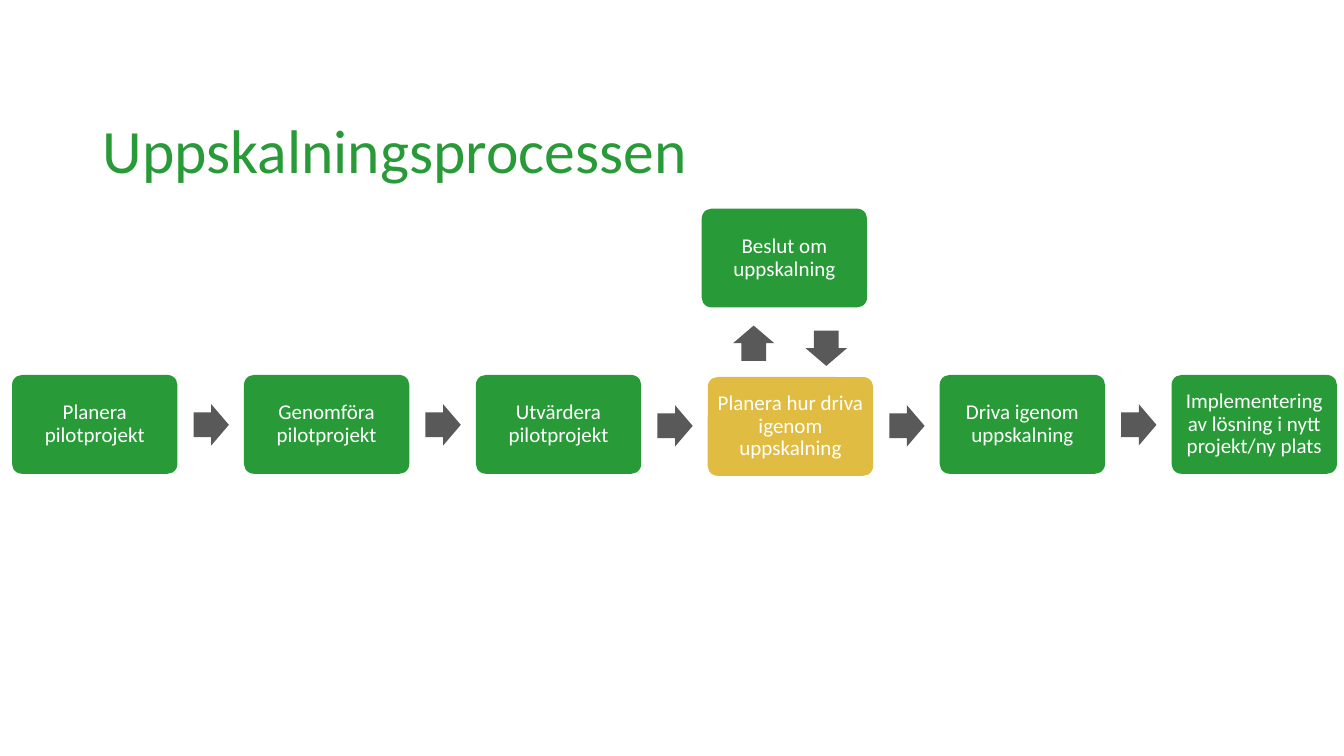
from pptx import Presentation
from pptx.dml.color import RGBColor
from pptx.enum.shapes import MSO_SHAPE
from pptx.enum.text import MSO_ANCHOR, PP_ALIGN
from pptx.util import Inches, Pt

ROUND, ARROW = MSO_SHAPE.ROUNDED_RECTANGLE, MSO_SHAPE.RIGHT_ARROW
LEFT, CENTER = PP_ALIGN.LEFT, PP_ALIGN.CENTER
MIDDLE, BOTTOM = MSO_ANCHOR.MIDDLE, MSO_ANCHOR.BOTTOM

GREEN, GOLD, GRAY, WHITE = "289B38", "E1BC42", "595959", "FFFFFF"


def color(code):
    return RGBColor.from_string(code)


def write(frame, text, size=15, ink=WHITE, align=CENTER, anchor=MIDDLE,
          pad=(0.06, 0.06), font="Calibri"):
    frame.word_wrap = True
    frame.vertical_anchor = anchor
    frame.margin_left = frame.margin_right = Inches(pad[0])
    frame.margin_top = frame.margin_bottom = Inches(pad[1])
    frame.text = text
    para = frame.paragraphs[0]
    para.alignment = align
    para.line_spacing = 0.9
    para.font.name = font
    para.font.size = Pt(size)
    para.font.color.rgb = color(ink)


class Board:
    box_size = (1.64, 0.98)
    arrow_size = (0.35, 0.41)

    def __init__(self, slide):
        self.slide = slide

    def title(self, text, x, y, w, h):
        title = self.slide.shapes.title
        title.left, title.top = Inches(x), Inches(y)
        title.width, title.height = Inches(w), Inches(h)
        write(title.text_frame, text, size=44, ink=GREEN, align=LEFT,
              anchor=BOTTOM, pad=(0.1, 0))

    def shape(self, kind, x, y, size, fill, *adjust):
        w, h = size
        shape = self.slide.shapes.add_shape(
            kind, Inches(x), Inches(y), Inches(w), Inches(h))
        shape.shadow.inherit = False
        shape.fill.solid()
        shape.fill.fore_color.rgb = color(fill)
        shape.line.fill.background()
        for i, value in enumerate(adjust):
            shape.adjustments[i] = value
        return shape

    def box(self, text, x, y, fill=GREEN):
        box = self.shape(ROUND, x, y, self.box_size, fill, 0.1)
        write(box.text_frame, text)

    def arrow(self, x, y, turn=0):
        arrow = self.shape(ARROW, x, y, self.arrow_size, GRAY, 0.6, 0.5)
        arrow.rotation = turn


deck = Presentation()
deck.slide_width, deck.slide_height = Inches(13.33), Inches(7.5)
board = Board(deck.slides.add_slide(deck.slide_layouts[5]))

board.title("Uppskalningsprocessen", 0.92, 0.71, 10.39, 1.14)

# Main row of steps; the highlighted step sits slightly lower
steps = [
    ("Planera pilotprojekt", GREEN),
    ("Genomföra pilotprojekt", GREEN),
    ("Utvärdera pilotprojekt", GREEN),
    ("Planera hur driva igenom uppskalning", GOLD),
    ("Driva igenom uppskalning", GREEN),
    ("Implementering av lösning i nytt projekt/ny plats", GREEN),
]
START, STEP, ROW = 0.12, 2.3, 3.72
for i, (text, fill) in enumerate(steps):
    x = START + i * STEP
    y = ROW + 0.02 if fill == GOLD else ROW
    board.box(text, x, y, fill)
    if i < len(steps) - 1:
        near = GOLD in (fill, steps[i + 1][1])
        board.arrow(x + 1.8, ROW + (0.3 if near else 0.29))

# Decision above the highlighted step, with arrows up and down
board.box("Beslut om uppskalning", 6.96, 2.07)
board.arrow(7.3, 3.2, turn=270)
board.arrow(8.02, 3.25, turn=90)

deck.save("out.pptx")
